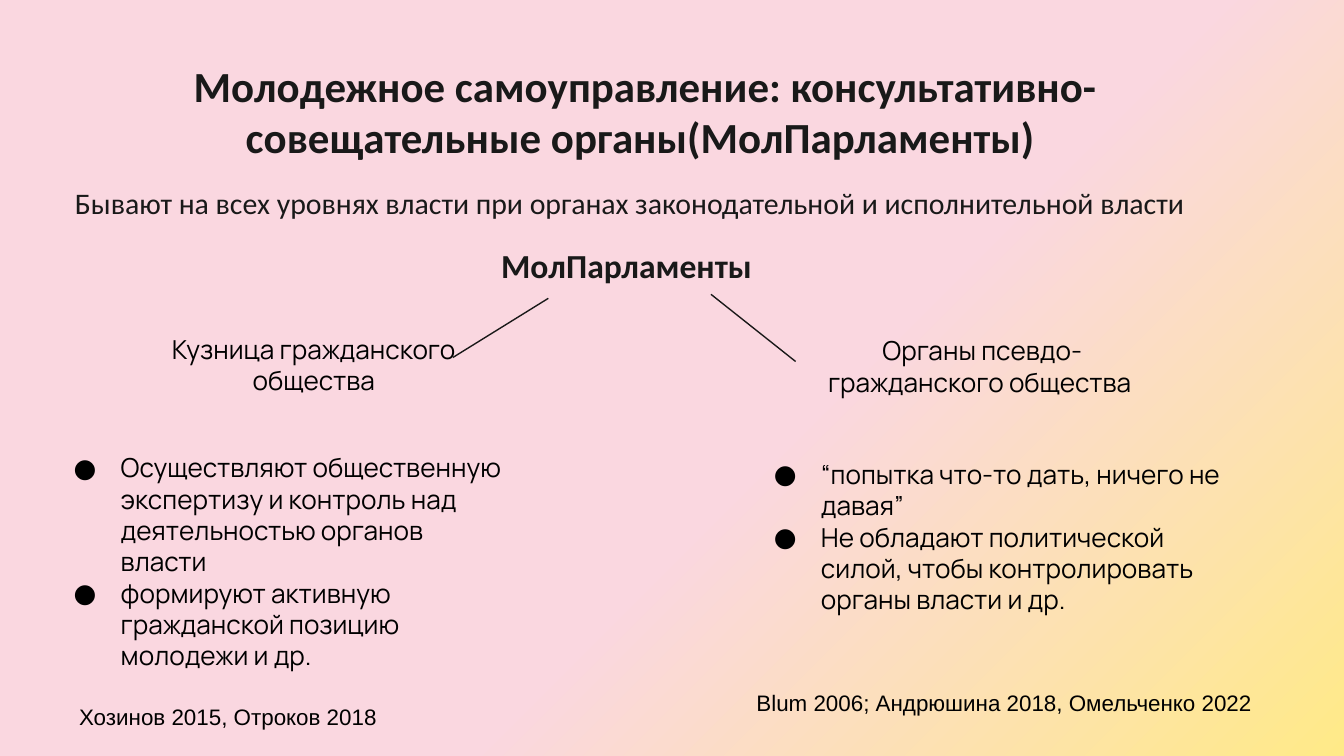
from dataclasses import dataclass

from lxml.etree import SubElement
from pptx import Presentation
from pptx.dml.color import RGBColor
from pptx.enum.shapes import MSO_CONNECTOR
from pptx.enum.text import MSO_ANCHOR, MSO_AUTO_SIZE, PP_ALIGN
from pptx.oxml.ns import qn
from pptx.slide import Slide
from pptx.util import Inches, Pt


@dataclass(frozen=True)
class Theme:
    ink: str = "191919"
    black: str = "000000"
    yellow: str = "FFEA88"
    pink: str = "FAD7E0"
    heading_font: str = "Calibri"
    body_font: str = "Manrope"
    source_font: str = "Arial"
    title: int = 23
    lead: int = 16
    topic: int = 18
    body: int = 14
    source: int = 12


@dataclass(frozen=True)
class Area:
    col: float
    row: float
    cols: float
    rows: float


@dataclass(frozen=True)
class Branch:
    name: str
    name_area: Area
    points: tuple[str, ...]
    points_area: Area
    start: tuple[float, float]
    end: tuple[float, float]


THEME = Theme()
WIDTH = Inches(10)
HEIGHT = WIDTH * 9 // 16
CELL = WIDTH / 100


def grid(count: float) -> int:
    return round(count * CELL)


def add_text(s: Slide, area: Area, *lines: str, size: int, font: str,
             color: str = THEME.black, bold: bool = False,
             align: PP_ALIGN = PP_ALIGN.LEFT, anchor: MSO_ANCHOR = MSO_ANCHOR.TOP,
             spacing: float = 1.0, margin: float = 0, indent: float = 0,
             bullet: str = "", grow: bool = False) -> None:
    sp = s.shapes.add_textbox(grid(area.col), grid(area.row), grid(area.cols), grid(area.rows))
    tf = sp.text_frame
    tf.word_wrap = True
    tf.auto_size = MSO_AUTO_SIZE.SHAPE_TO_FIT_TEXT if grow else MSO_AUTO_SIZE.NONE
    tf.vertical_anchor = anchor
    tf.margin_left = tf.margin_right = tf.margin_top = tf.margin_bottom = grid(1)
    for i, line in enumerate(lines):
        p = tf.add_paragraph() if i else tf.paragraphs[0]
        p.alignment = align
        p.line_spacing = spacing
        pPr = p._p.get_or_add_pPr()
        pPr.set("marL", str(grid(margin)))
        pPr.set("indent", str(grid(indent)))
        if bullet:
            buClr = SubElement(pPr, qn("a:buClr"))
            SubElement(buClr, qn("a:srgbClr"), val=color)
            SubElement(pPr, qn("a:buFont"), typeface=font)
            SubElement(pPr, qn("a:buChar"), char=bullet)
        r = p.add_run()
        r.text = line
        r.font.name = font
        r.font.size = Pt(size)
        r.font.bold = bold
        r.font.color.rgb = RGBColor.from_string(color)


def add_line(s: Slide, start: tuple[float, float], end: tuple[float, float]) -> None:
    line = s.shapes.add_connector(MSO_CONNECTOR.STRAIGHT, *map(grid, start + end))
    line.line.color.rgb = RGBColor.from_string(THEME.ink)
    line.line.width = Pt(0.75)
    SubElement(line._element.spPr, qn("a:effectLst"))


def add_branch(s: Slide, branch: Branch) -> None:
    add_text(s, branch.name_area, branch.name, size=THEME.body, font=THEME.body_font,
             align=PP_ALIGN.CENTER, grow=True)
    add_text(s, branch.points_area, *branch.points, size=THEME.body, font=THEME.body_font,
             margin=5, indent=-3.5, bullet="●", grow=True)
    add_line(s, branch.start, branch.end)


def paint_background(s: Slide) -> None:
    fill = s.background.fill
    fill.gradient()
    fill.gradient_angle = 135
    stops = zip(fill.gradient_stops, ((0, THEME.yellow), (0.42, THEME.pink)))
    for stop, (position, color) in stops:
        stop.position = position
        stop.color.rgb = RGBColor.from_string(color)


BRANCHES = (
    Branch("Кузница гражданского общества", Area(8.9, 23.8, 28.9, 6.7),
           ("Осуществляют общественную экспертизу и контроль над деятельностью органов власти",
            "формируют активную гражданской позицию молодежи и др."),
           Area(3, 32.6, 36.2, 16.2), (40.8, 22.2), (33.7, 26.6)),
    Branch("Органы псевдо-гражданского общества ", Area(58.3, 23.9, 29.6, 6.7),
           ("“попытка что-то дать, ничего не давая”",
            "Не обладают политической силой, чтобы контролировать органы власти и др."),
           Area(55.1, 33.1, 38.9, 13.8), (52.9, 21.9), (59.2, 26.9)),
)


def main() -> None:
    prs = Presentation()
    prs.slide_width, prs.slide_height = WIDTH, HEIGHT
    s = prs.slides.add_slide(prs.slide_layouts[6])
    paint_background(s)
    add_text(s, Area(4.1, 3.4, 87.9, 6.3),
             "Молодежное самоуправление: консультативно-совещательные органы(МолПарламенты) ",
             size=THEME.title, font=THEME.heading_font, color=THEME.ink, bold=True,
             align=PP_ALIGN.CENTER)
    add_text(s, Area(4.6, 12.5, 90.7, 4.9),
             "Бывают на всех уровнях власти при органах законодательной и исполнительной власти",
             size=THEME.lead, font=THEME.heading_font, color=THEME.ink,
             anchor=MSO_ANCHOR.BOTTOM, spacing=1.15)
    add_text(s, Area(36.3, 18, 31.2, 4.2), "МолПарламенты",
             size=THEME.topic, font=THEME.heading_font, color=THEME.ink, bold=True,
             anchor=MSO_ANCHOR.BOTTOM, spacing=1.15)
    for branch in BRANCHES:
        add_branch(s, branch)
    add_text(s, Area(0, 50.3, 32.8, 4), "Хозинов 2015, Отроков 2018",
             size=THEME.source, font=THEME.source_font, align=PP_ALIGN.JUSTIFY,
             spacing=1.5, indent=4.9, grow=True)
    add_text(s, Area(55.3, 50.3, 53.6, 4), "Blum 2006; Андрюшина 2018, Омельченко 2022",
             size=THEME.source, font=THEME.source_font, grow=True)
    prs.save("out.pptx")


if __name__ == "__main__":
    main()
